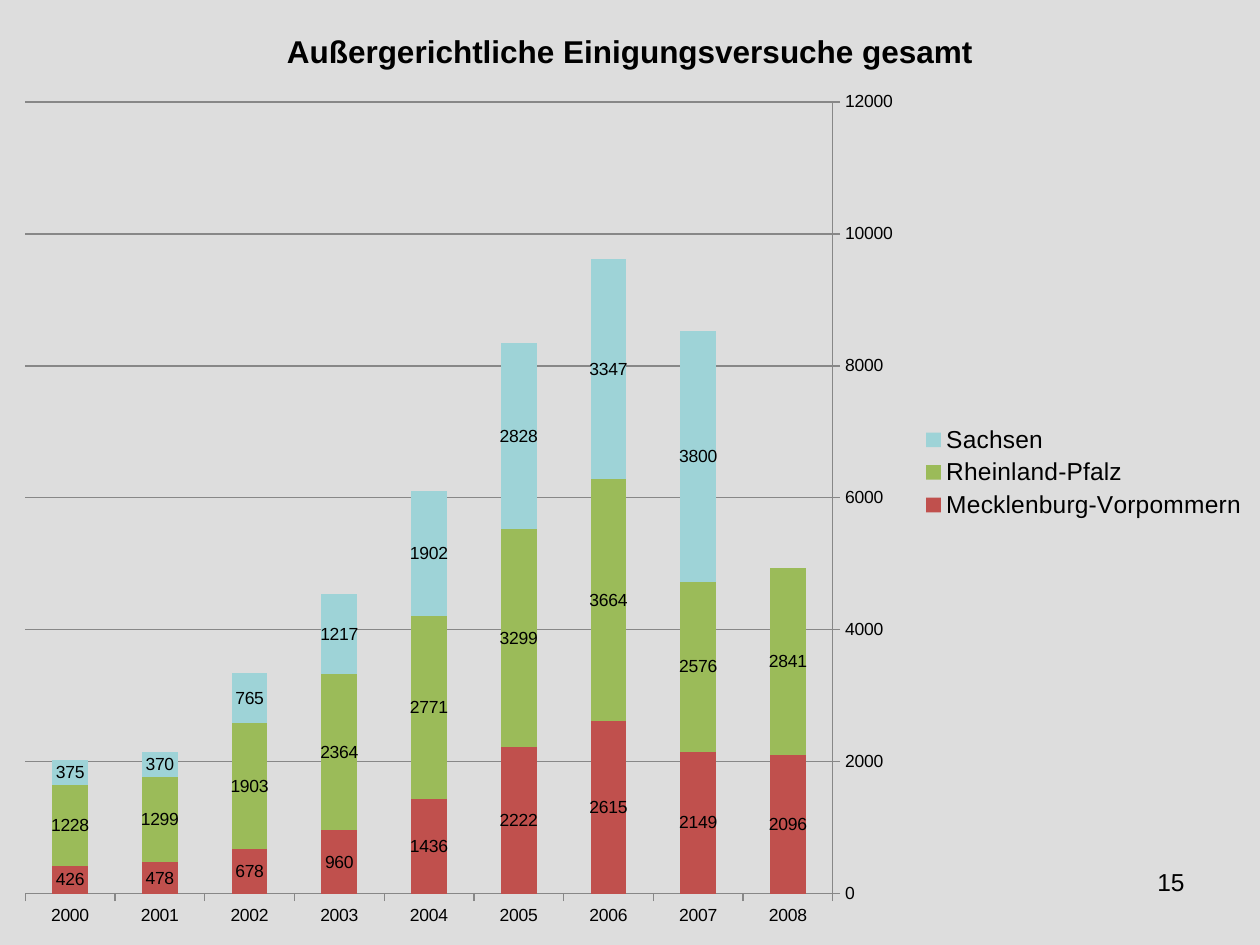
from lxml import etree
from pptx import Presentation
from pptx.chart.data import CategoryChartData as Data
from pptx.dml.color import RGBColor
from pptx.enum.chart import XL_CHART_TYPE as Kind
from pptx.enum.chart import XL_LABEL_POSITION as Spot
from pptx.enum.chart import XL_LEGEND_POSITION as Side
from pptx.enum.chart import XL_TICK_MARK as Tick
from pptx.enum.text import PP_ALIGN as Align
from pptx.oxml.ns import qn
from pptx.util import Inches, Pt

BLACK = RGBColor(0x00, 0x00, 0x00)
BACK = RGBColor(0xDD, 0xDD, 0xDD)
GRAY = RGBColor(0x87, 0x87, 0x87)
RED = RGBColor(0xC0, 0x50, 0x4D)
GREEN = RGBColor(0x9B, 0xBB, 0x59)
BLUE = RGBColor(0x9E, 0xD3, 0xD7)

YEARS = [str(year) for year in range(2008, 1999, -1)]
STATES = [
    ("Mecklenburg-Vorpommern", RED,
     [2096, 2149, 2615, 2222, 1436, 960, 678, 478, 426]),
    ("Rheinland-Pfalz", GREEN,
     [2841, 2576, 3664, 3299, 2771, 2364, 1903, 1299, 1228]),
    ("Sachsen", BLUE,
     [None, 3800, 3347, 2828, 1902, 1217, 765, 370, 375]),
]


def style(font, size, bold=False):
    for key, val in {"name": "Arial", "size": Pt(size), "bold": bold}.items():
        setattr(font, key, val)
    font.color.rgb = BLACK


deck = Presentation()
deck.slide_width, deck.slide_height = Inches(10), Inches(7.5)
slide = deck.slides.add_slide(deck.slide_layouts[6])
slide.background.fill.solid()
slide.background.fill.fore_color.rgb = BACK

# Page number
box = slide.shapes.add_textbox(Inches(7.17), Inches(6.83), Inches(2.33), Inches(0.52))
box.text_frame.word_wrap = True
para = box.text_frame.paragraphs[0]
para.alignment = Align.RIGHT
run = para.add_run()
run.text = "15"
style(run.font, 14)

# Stacked columns
data = Data()
data.categories = YEARS
for name, color, vals in STATES:
    data.add_series(name, vals)
chart = slide.shapes.add_chart(Kind.COLUMN_STACKED, 0, 0, Inches(10), Inches(7.5), data).chart
style(chart.font, 10)
plot = chart.plots[0]
for key, val in {"gap_width": 150, "overlap": 100, "vary_by_categories": False}.items():
    setattr(plot, key, val)
for bars, (name, color, vals) in zip(plot.series, STATES):
    bars.format.fill.solid()
    bars.format.fill.fore_color.rgb = color
    labels = bars.data_labels
    labels.show_value = True
    labels.position = Spot.CENTER
    style(labels.font, 10)

# Title
chart.has_title = True
title = chart.chart_title
title.include_in_layout = False
run = title.text_frame.paragraphs[0].add_run()
run.text = "Außergerichtliche Einigungsversuche gesamt"
style(run.font, 18, True)

# Legend
chart.has_legend = True
chart.legend.position = Side.RIGHT
chart.legend.include_in_layout = False
style(chart.legend.font, 14)

# Axes: reversed years put the value axis on the right
years, scale = chart.category_axis, chart.value_axis
years.reverse_order = True
for key, val in {"minimum_scale": 0, "maximum_scale": 12000, "major_unit": 2000,
                 "has_major_gridlines": True}.items():
    setattr(scale, key, val)
for axis in (years, scale):
    axis.major_tick_mark = Tick.OUTSIDE
    style(axis.tick_labels.font, 10)
for part in (years, scale, scale.major_gridlines):
    part.format.line.color.rgb = GRAY
    part.format.line.width = Pt(0.75)

# Plot area within the chart
area = chart.element.find(".//" + qn("c:plotArea"))
old = area.find(qn("c:layout"))
if old is not None:
    area.remove(old)
layout = etree.Element(qn("c:layout"))
area.insert(0, layout)
manual = etree.SubElement(layout, qn("c:manualLayout"))
for key, val in {"layoutTarget": "inner", "xMode": "edge", "yMode": "edge",
                 "x": 0.02, "y": 0.108, "w": 0.641, "h": 0.838}.items():
    etree.SubElement(manual, qn("c:" + key)).set("val", str(val))

deck.save("out.pptx")
